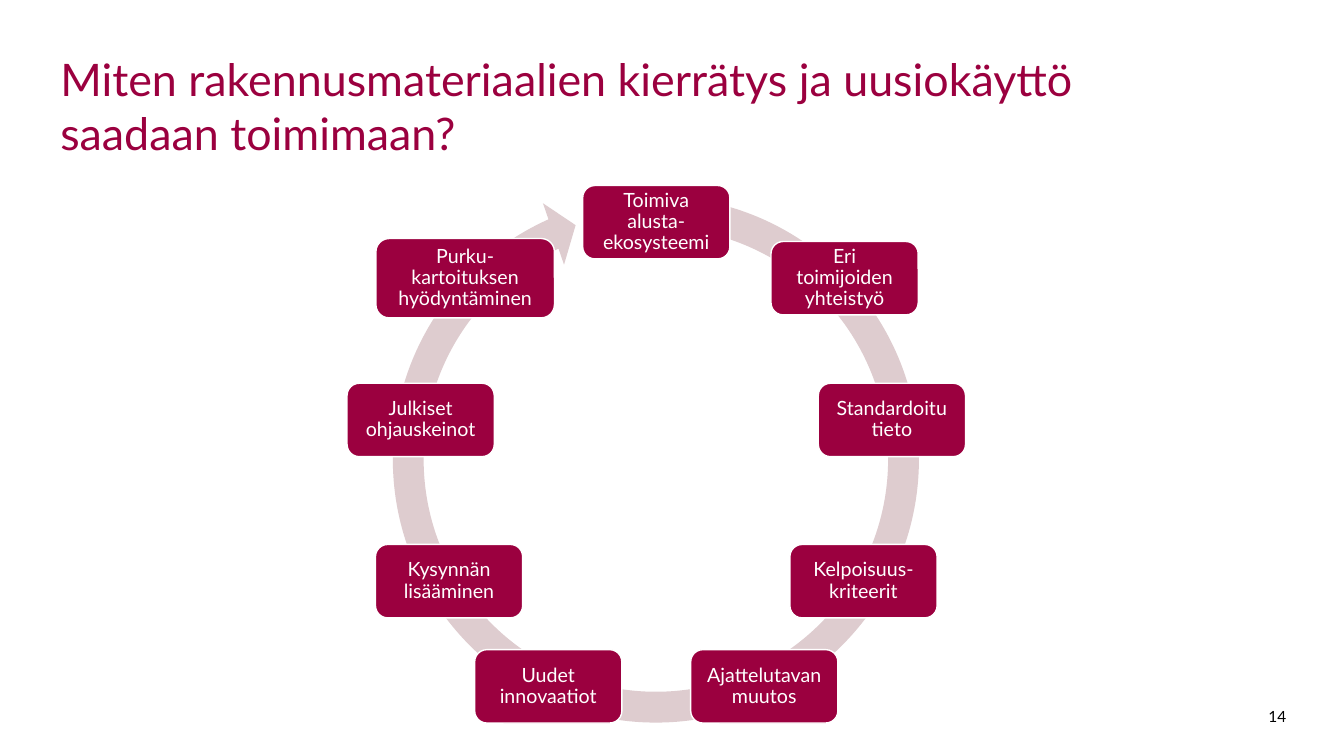
"""Build a slide showing nine steps around a recycling cycle."""
from dataclasses import dataclass
from math import cos, radians, sin

from pptx import Presentation
from pptx.dml.color import RGBColor
from pptx.enum.shapes import MSO_SHAPE
from pptx.enum.text import MSO_ANCHOR, MSO_AUTO_SIZE, PP_ALIGN
from pptx.shapes.autoshape import Shape
from pptx.shapes.shapetree import GroupShapes
from pptx.slide import Slide
from pptx.text.text import TextFrame
from pptx.util import Cm, Pt

ROUNDED = MSO_SHAPE.ROUNDED_RECTANGLE
CIRCULAR_ARROW = MSO_SHAPE.CIRCULAR_ARROW
MIDDLE, BOTTOM, TOP = MSO_ANCHOR.MIDDLE, MSO_ANCHOR.BOTTOM, MSO_ANCHOR.TOP
NO_AUTOFIT = MSO_AUTO_SIZE.NONE
LEFT, CENTER, RIGHT = PP_ALIGN.LEFT, PP_ALIGN.CENTER, PP_ALIGN.RIGHT

COLORS = {"burgundy": "9B003F", "ring": "DECCCF", "white": "FFFFFF", "black": "000000"}
FONT = "Lato"
TITLE_ONLY = 5
CENTER_X, CENTER_Y, RADIUS = 16.54, 11.63, 6.03
RING_LEFT, RING_TOP, RING_SIZE = 9.47, 4.52, 14.12
RING_ADJUSTMENTS = (0.055, 3.307, 147.349, 168.258, 0.058)


@dataclass(frozen=True)
class Step:
    """One box on the cycle, with its sideways shift and size in centimetres."""

    label: str
    shift: float = 0
    width: float = 3.71
    height: float = 1.85


STEPS = (
    Step("Toimiva alusta-ekosysteemi"),
    Step("Eri toimijoiden yhteistyö", shift=0.87),
    Step("Standardoitu tieto"),
    Step("Kelpoisuus-kriteerit"),
    Step("Ajattelutavan muutos", shift=0.66),
    Step("Uudet innovaatiot", shift=-0.66),
    Step("Kysynnän lisääminen"),
    Step("Julkiset ohjauskeinot"),
    Step("Purku-kartoituksen hyödyntäminen", shift=-0.94, width=4.5, height=2),
)


def color(name: str) -> RGBColor:
    """Return a named palette colour."""
    return RGBColor.from_string(COLORS[name])


def write(frame: TextFrame, text: str, size: float, ink: str, align: PP_ALIGN,
          anchor: MSO_ANCHOR, inset: tuple[float, float], spacing: float = 1) -> None:
    """Fill a frame with one formatted paragraph."""
    frame.text = text
    frame.word_wrap = True
    frame.auto_size = NO_AUTOFIT
    frame.vertical_anchor = anchor
    frame.margin_left = frame.margin_right = Cm(inset[0])
    frame.margin_top = frame.margin_bottom = Cm(inset[1])
    para = frame.paragraphs[0]
    para.alignment = align
    para.line_spacing = spacing
    para.font.name = FONT
    para.font.size = Pt(size)
    para.font.color.rgb = color(ink)


def add_filled(shapes: GroupShapes, kind: MSO_SHAPE, left: float, top: float,
               width: float, height: float, fill: str) -> Shape:
    """Add a flat filled shape without an outline."""
    shape = shapes.add_shape(kind, Cm(left), Cm(top), Cm(width), Cm(height))
    shape.shadow.inherit = False
    shape.fill.solid()
    shape.fill.fore_color.rgb = color(fill)
    shape.line.fill.background()
    return shape


def add_step(shapes: GroupShapes, step: Step, angle: float) -> None:
    """Place a step box at a clockwise angle from the top of the cycle."""
    left = CENTER_X + RADIUS * sin(angle) + step.shift - step.width / 2
    top = CENTER_Y - RADIUS * cos(angle) - step.height / 2
    box = add_filled(shapes, ROUNDED, left, top, step.width, step.height, "burgundy")
    box.line.color.rgb = color("white")
    box.line.width = Pt(1)
    write(box.text_frame, step.label, 14, "white", CENTER, MIDDLE, (0.24, 0.24), 0.9)


def add_cycle(slide: Slide) -> None:
    """Draw the arrow ring with the steps spread evenly around it."""
    shapes = slide.shapes.add_group_shape().shapes
    ring = add_filled(shapes, CIRCULAR_ARROW, RING_LEFT, RING_TOP, RING_SIZE, RING_SIZE, "ring")
    for index, value in enumerate(RING_ADJUSTMENTS):
        ring.adjustments[index] = value
    for index, step in enumerate(STEPS):
        add_step(shapes, step, radians(360 / len(STEPS) * index))


def main() -> None:
    """Create and save the deck."""
    deck = Presentation()
    deck.slide_width, deck.slide_height = Cm(33.87), Cm(19.05)
    slide = deck.slides.add_slide(deck.slide_layouts[TITLE_ONLY])
    title = slide.shapes.title
    title.left, title.top, title.width, title.height = Cm(1.52), Cm(0.84), Cm(28.3), Cm(3.18)
    write(title.text_frame, "Miten rakennusmateriaalien kierrätys ja uusiokäyttö saadaan toimimaan?",
          32, "burgundy", LEFT, BOTTOM, (0, 0))
    add_cycle(slide)
    number = slide.shapes.add_textbox(Cm(31.27), Cm(17.7), Cm(1.4), Cm(1.02))
    write(number.text_frame, "14", 11, "black", RIGHT, TOP, (0.25, 0.13))
    deck.save("out.pptx")


if __name__ == "__main__":
    main()
